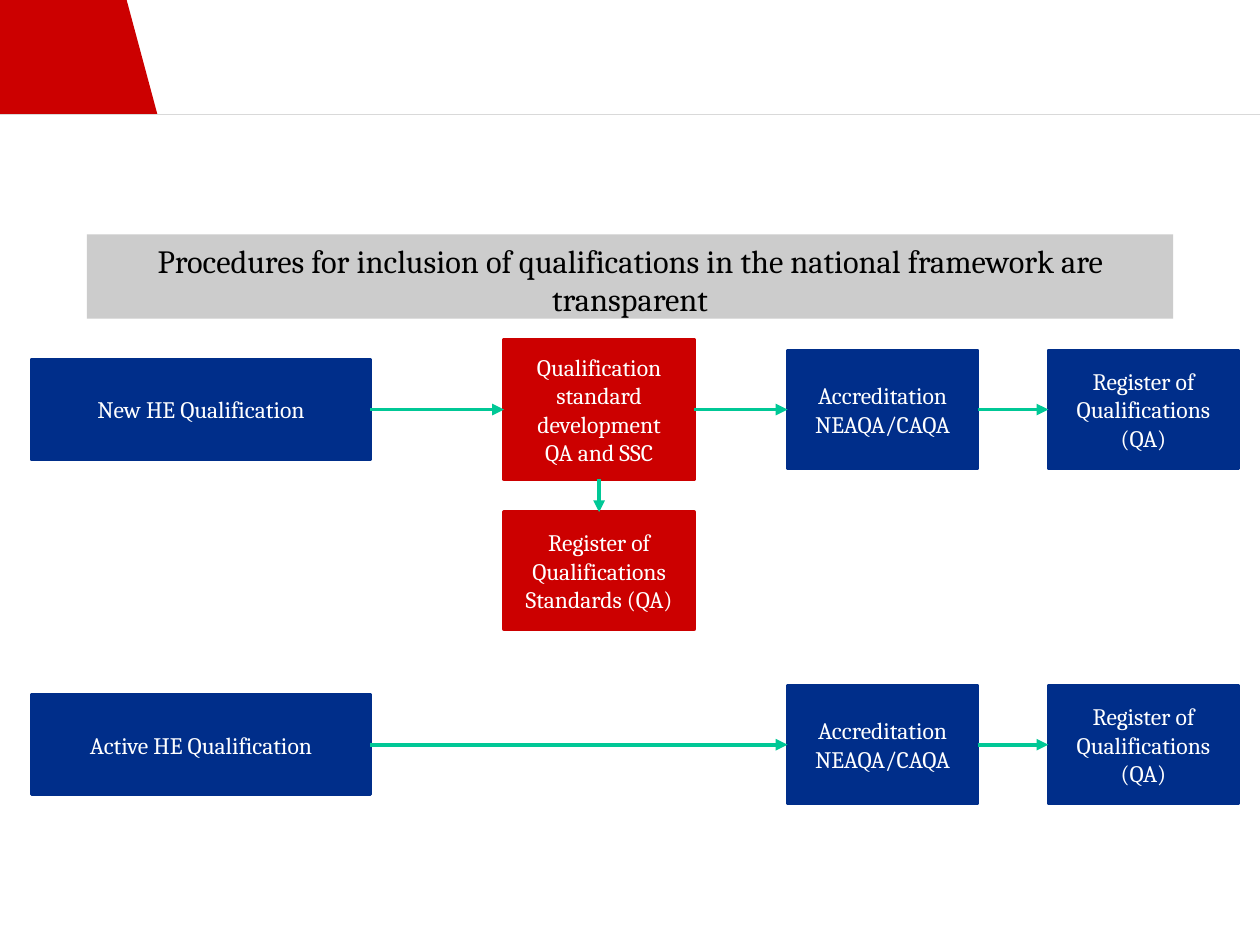
from dataclasses import dataclass

from lxml import etree
from pptx import Presentation
from pptx.dml.color import RGBColor
from pptx.enum import shapes, text
from pptx.oxml import ns
from pptx.util import Inches, Pt


@dataclass(frozen=True)
class Theme:
    font: str = "Cambria"
    red: str = "CC0000"
    blue: str = "002E8A"
    green: str = "00C896"
    band: str = "CCCCCC"
    rule: str = "D9D9D9"
    white: str = "FFFFFF"
    black: str = "000000"
    head: float = 18.5
    body: float = 13.5


TOP, LEFT, BOTTOM, RIGHT = range(4)


class Deck:
    def __init__(self, theme):
        self.theme = theme
        self.file = Presentation()
        self.file.slide_width = Inches(10)
        self.file.slide_height = Inches(7.5)
        self.slide = self.file.slides.add_slide(self.file.slide_layouts[5])

    def paint(self, item, color):
        item.fill.solid()
        item.fill.fore_color.rgb = RGBColor.from_string(color)

    def label(self, frame, lines, size, color):
        frame.word_wrap = True
        for n, line in enumerate(lines):
            para = frame.paragraphs[0] if n == 0 else frame.add_paragraph()
            para.alignment = text.PP_ALIGN.CENTER
            run = para.add_run()
            run.text = line
            run.font.name = self.theme.font
            run.font.size = Pt(size)
            run.font.color.rgb = RGBColor.from_string(color)

    def title(self, line, x, y, w, h):
        item = self.slide.shapes.title
        item.left, item.top = Inches(x), Inches(y)
        item.width, item.height = Inches(w), Inches(h)
        self.paint(item, self.theme.band)
        frame = item.text_frame
        frame.auto_size = text.MSO_AUTO_SIZE.NONE
        frame.vertical_anchor = text.MSO_ANCHOR.TOP
        self.label(frame, [line], self.theme.head, self.theme.black)

    def shape(self, kind, x, y, w, h, color):
        item = self.slide.shapes.add_shape(
            kind, Inches(x), Inches(y), Inches(w), Inches(h))
        item.shadow.inherit = False
        self.paint(item, color)
        item.line.fill.background()
        return item

    def box(self, lines, x, mid, w, h, color):
        item = self.shape(shapes.MSO_SHAPE.RECTANGLE, x, mid - h / 2, w, h, color)
        item.line.color.rgb = RGBColor.from_string(color)
        item.line.width = Pt(2)
        item.text_frame.vertical_anchor = text.MSO_ANCHOR.MIDDLE
        self.label(item.text_frame, lines, self.theme.body, self.theme.white)
        return item

    def line(self, x1, y1, x2, y2, color, width):
        item = self.slide.shapes.add_connector(
            shapes.MSO_CONNECTOR.STRAIGHT,
            Inches(x1), Inches(y1), Inches(x2), Inches(y2))
        item.line.color.rgb = RGBColor.from_string(color)
        item.line.width = Pt(width)
        etree.SubElement(item.line._get_or_add_ln().getparent(),
                         ns.qn("a:effectLst"))
        return item

    def arrow(self, start, end, out=RIGHT, into=LEFT):
        item = self.line(0, 0, 0, 0, self.theme.green, 2.25)
        item.begin_connect(start, out)
        item.end_connect(end, into)
        etree.SubElement(item.line._get_or_add_ln(), ns.qn("a:tailEnd"),
                         type="triangle")

    def save(self):
        self.file.save("out.pptx")


def main():
    theme = Theme()
    deck = Deck(theme)
    deck.shape(shapes.MSO_SHAPE.ISOSCELES_TRIANGLE, 0.75, -0.02, 0.5, 0.93, theme.red)
    deck.shape(shapes.MSO_SHAPE.RECTANGLE, 0, -0.02, 1, 0.93, theme.red)
    deck.line(0, 0.91, 10, 0.91, theme.rule, 0.75)
    deck.title("Procedures for inclusion of qualifications in the national "
               "framework are transparent", 0.69, 1.86, 8.62, 0.67)

    wide, slim, tall = 2.69, 1.51, 0.93
    new, active = 3.25, 5.91
    rows = []
    for name, mid in (("New", new), ("Active", active)):
        first = deck.box([f"{name} HE Qualification"], 0.25, mid, wide, 0.79, theme.blue)
        check = deck.box(["Accreditation", "NEAQA/CAQA"],
                         6.25, mid, slim, tall, theme.blue)
        final = deck.box(["Register of Qualifications", "(QA)"],
                         8.32, mid, slim, tall, theme.blue)
        deck.arrow(check, final)
        rows.append((first, check))

    draft = deck.box(["Qualification standard development", "QA and SSC"],
                     4, new, slim, 1.11, theme.red)
    norms = deck.box(["Register of Qualifications", "Standards (QA)"],
                     4, 4.53, slim, tall, theme.red)
    (fresh, audit), (live, renew) = rows
    deck.arrow(fresh, draft)
    deck.arrow(draft, audit)
    deck.arrow(draft, norms, BOTTOM, TOP)
    deck.arrow(live, renew)
    deck.save()


if __name__ == "__main__":
    main()
